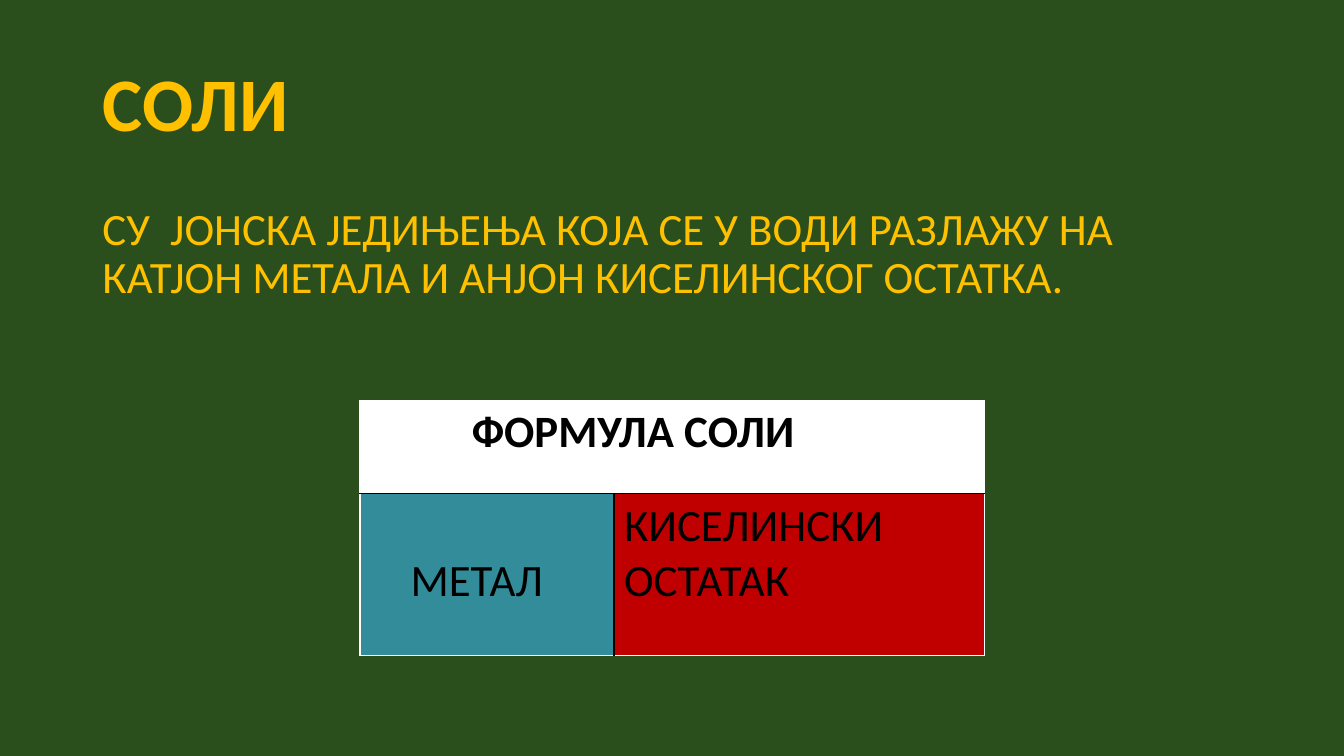
from dataclasses import dataclass

from lxml.etree import SubElement
from pptx import Presentation
from pptx.dml.color import RGBColor as Color
from pptx.enum.text import MSO_ANCHOR as Anchor, MSO_AUTO_SIZE as AutoSize, PP_ALIGN as Align
from pptx.oxml.ns import qn
from pptx.util import Pt


@dataclass(frozen=True)
class Theme:
    font: str = "Calibri"
    background: str = "2A4F1C"
    gold: str = "FFC000"
    black: str = "000000"
    white: str = "FFFFFF"
    metal: str = "328C99"
    acid: str = "C00000"
    title_size: int = 54
    text_size: int = 32


THEME = Theme()
LINE_HEIGHT = 39


def style_font(font, size, color, bold=False):
    font.name = THEME.font
    font.size = Pt(size)
    font.bold = bold
    font.color.rgb = Color.from_string(color)


def fill_placeholder(shape, text, box, size, anchor, bold=False, space_before=0):
    shape.left, shape.top, shape.width, shape.height = map(Pt, box)
    frame = shape.text_frame
    frame.text = text
    frame.word_wrap = True
    frame.auto_size = AutoSize.NONE
    frame.vertical_anchor = anchor
    paragraph = frame.paragraphs[0]
    paragraph.alignment = Align.LEFT
    paragraph.line_spacing = 0.9
    paragraph.space_before = Pt(space_before)
    style_font(paragraph.font, size, THEME.gold, bold)
    return paragraph


def remove_bullet(paragraph):
    properties = paragraph._p.get_or_add_pPr()
    properties.set("marL", "0")
    properties.set("indent", "0")
    SubElement(properties, qn("a:buNone"))


def set_borders(cell, colors):
    properties = cell._tc.get_or_add_tcPr()
    for side, color in zip("LRTB", colors):
        line = SubElement(properties, qn(f"a:ln{side}"), w=str(Pt(1)))
        fill = SubElement(line, qn("a:solidFill"))
        SubElement(fill, qn("a:srgbClr"), val=color)


def fill_cell(cell, text, color, indent=0, drop=0, bold=False):
    cell.fill.solid()
    cell.fill.fore_color.rgb = Color.from_string(color)
    cell.margin_left = Pt(7.2 + indent)
    cell.margin_top = Pt(3.6 + drop)
    cell.text = text
    style_font(cell.text_frame.paragraphs[0].font, THEME.text_size, THEME.black, bold)


def add_formula_table(slide):
    widths, heights = (181.5, 264.5), (67, 115.2)
    frame = slide.shapes.add_table(2, 2, Pt(257.1), Pt(285.8), Pt(sum(widths)), Pt(sum(heights)))
    table = frame.table
    for column, width in zip(table.columns, widths):
        column.width = Pt(width)
    for row, height in zip(table.rows, heights):
        row.height = Pt(height)

    # White frame, black inner lines
    black, white = THEME.black, THEME.white
    header, metal, acid = table.cell(0, 0), table.cell(1, 0), table.cell(1, 1)
    header.merge(table.cell(0, 1))
    for cell in (header, table.cell(0, 1)):
        set_borders(cell, (white, white, white, black))
    set_borders(metal, (white, black, black, white))
    set_borders(acid, (black, white, black, white))

    fill_cell(header, "ФОРМУЛА СОЛИ", white, indent=72.7, bold=True)
    fill_cell(metal, "МЕТАЛ", THEME.metal, indent=29, drop=LINE_HEIGHT)
    fill_cell(acid, "КИСЕЛИНСКИ ОСТАТАК", THEME.acid)


def main():
    presentation = Presentation()
    presentation.slide_width, presentation.slide_height = Pt(960), Pt(540)
    slide = presentation.slides.add_slide(presentation.slide_layouts[1])
    slide.background.fill.solid()
    slide.background.fill.fore_color.rgb = Color.from_string(THEME.background)

    # Title and definition
    title, body = slide.placeholders
    fill_placeholder(title, "СОЛИ", (66, 24.5, 828, 104.4), THEME.title_size,
                     Anchor.MIDDLE, bold=True)
    definition = fill_placeholder(
        body,
        "СУ  ЈОНСКА ЈЕДИЊЕЊА КОЈА СЕ У ВОДИ РАЗЛАЖУ НА КАТЈОН МЕТАЛА И АНЈОН КИСЕЛИНСКОГ ОСТАТКА.",
        (66, 144, 828, 342.7), THEME.text_size, Anchor.TOP, space_before=10)
    remove_bullet(definition)

    # Salt formula
    add_formula_table(slide)
    presentation.save("out.pptx")


if __name__ == "__main__":
    main()
